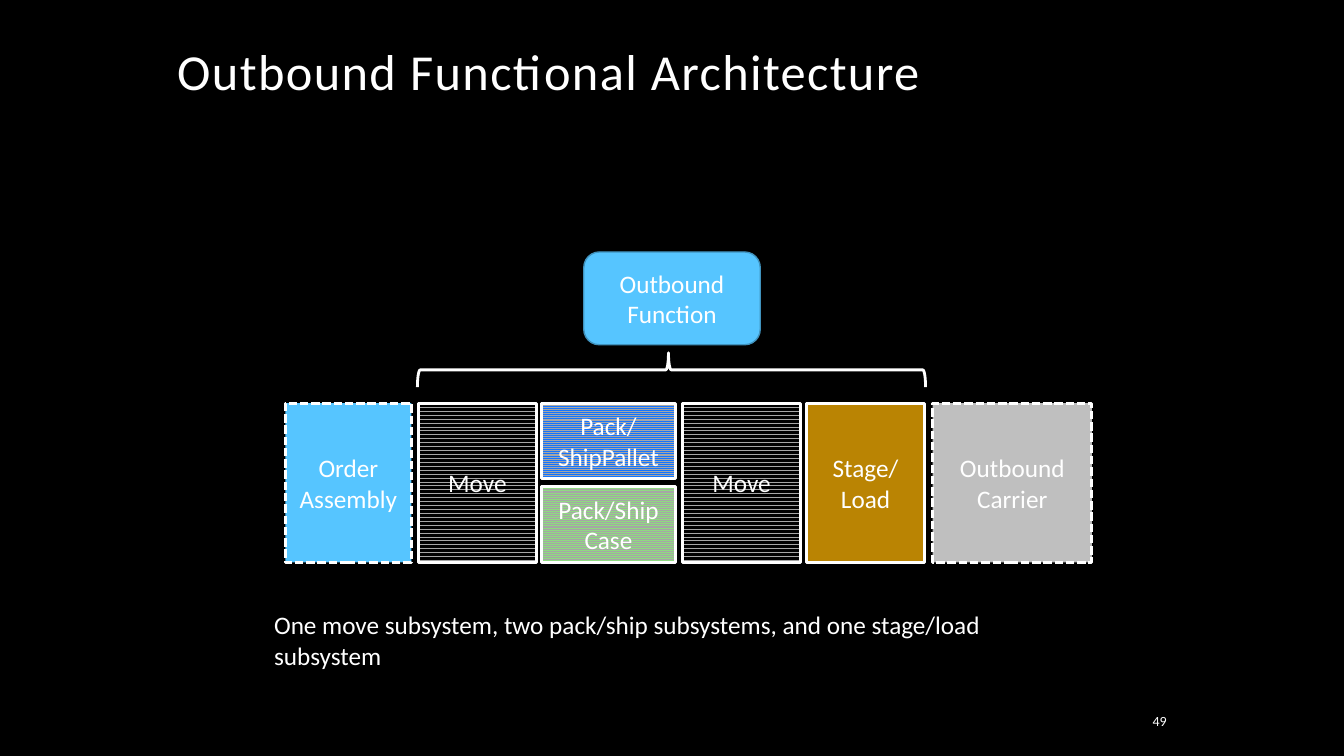
from pptx import Presentation
from pptx.dml.color import RGBColor
from pptx.enum import dml, shapes, text
from pptx.util import Inches, Pt

COLORS = {
    "black": "000000", "white": "FFFFFF", "sky": "56C5FF", "sky_edge": "4092BD",
    "gold": "BA8403", "silver": "BFBFBF", "gray": "A6A6A6",
    "blue": "1474FF", "green": "8FDA81",
}
PATTERN = dml.MSO_PATTERN
ANCHOR = text.MSO_ANCHOR
ALIGN = text.PP_ALIGN


def color(name):
    return RGBColor.from_string(COLORS[name])


def write(shape, words, size=18, align=ALIGN.CENTER, anchor=ANCHOR.MIDDLE):
    """Fill a shape with one paragraph of white text and return the paragraph."""
    frame = shape.text_frame
    frame.word_wrap = True
    frame.vertical_anchor = anchor
    frame.text = words
    paragraph = frame.paragraphs[0]
    paragraph.alignment = align
    for run in paragraph.runs:
        run.font.name = "Calibri"
        run.font.size = Pt(size)
        run.font.color.rgb = color("white")
    return paragraph


prs = Presentation()
prs.slide_width, prs.slide_height = Inches(13.33), Inches(7.5)
slide = prs.slides.add_slide(prs.slide_layouts[6])
slide.background.fill.solid()
slide.background.fill.fore_color.rgb = color("black")

# Title
title = slide.shapes.add_textbox(Inches(1.66), Inches(0.42), Inches(10), Inches(1.5))
heading = write(title, "Outbound Functional Architecture", 36, ALIGN.LEFT, ANCHOR.TOP)
heading.line_spacing = 0.9
heading.runs[0].font._element.set("spc", "100")

# Process steps: words, left, top, width, height, fill, pattern, dashed
row_top, full, half = 4, 1.58, 0.75
lower_top = row_top + full - half
steps = [
    ("Order Assembly", 2.83, row_top, 1.25, full, "sky", None, True),
    ("Move", 4.15, row_top, 1.17, full, "black", PATTERN.WAVE, False),
    ("Pack/ShipPallet", 5.37, row_top, 1.33, half, "blue", PATTERN.LIGHT_HORIZONTAL, False),
    ("Pack/Ship Case", 5.37, lower_top, 1.33, half, "green", PATTERN.NARROW_HORIZONTAL, False),
    ("Move", 6.77, row_top, 1.17, full, "black", PATTERN.WAVE, False),
    ("Stage/\vLoad", 8, row_top, 1.17, full, "gold", None, False),
    ("Outbound Carrier", 9.25, row_top, 1.58, full, "silver", None, True),
]
for words, left, top, width, height, fill, pattern, dashed in steps:
    step = slide.shapes.add_shape(shapes.MSO_SHAPE.RECTANGLE, Inches(left), Inches(top),
                                  Inches(width), Inches(height))
    step.shadow.inherit = False
    if pattern is None:
        step.fill.solid()
        step.fill.fore_color.rgb = color(fill)
    else:
        step.fill.patterned()
        step.fill.pattern = pattern
        step.fill.fore_color.rgb = color("gray")
        step.fill.back_color.rgb = color(fill)
    step.line.color.rgb = color("white")
    step.line.width = Pt(2)
    if dashed:
        step.line.dash_style = dml.MSO_LINE.SQUARE_DOT
    write(step, words)

# Function above the brace that spans its steps
function = slide.shapes.add_shape(shapes.MSO_SHAPE.ROUNDED_RECTANGLE, Inches(5.79),
                                  Inches(2.5), Inches(1.75), Inches(0.92))
function.shadow.inherit = False
function.fill.solid()
function.fill.fore_color.rgb = color("sky")
function.line.color.rgb = color("sky_edge")
function.line.width = Pt(1)
write(function, "Outbound Function")

brace = slide.shapes.add_shape(shapes.MSO_SHAPE.LEFT_BRACE, Inches(6.49), Inches(1.15),
                               Inches(0.34), Inches(5.04))
brace.shadow.inherit = False
brace.rotation = 90
brace.adjustments[0] = 0.08
brace.adjustments[1] = 0.506
brace.fill.background()
brace.line.color.rgb = color("white")
brace.line.width = Pt(2)

# Summary and page number
summary = slide.shapes.add_textbox(Inches(2.62), Inches(6), Inches(8.08), Inches(0.71))
write(summary, "One move subsystem, two pack/ship subsystems, and one stage/load subsystem",
      align=ALIGN.LEFT, anchor=ANCHOR.TOP)
page = slide.shapes.add_textbox(Inches(10.75), Inches(7), Inches(0.92), Inches(0.3))
write(page, "49", 10, ALIGN.RIGHT)

prs.save("out.pptx")
